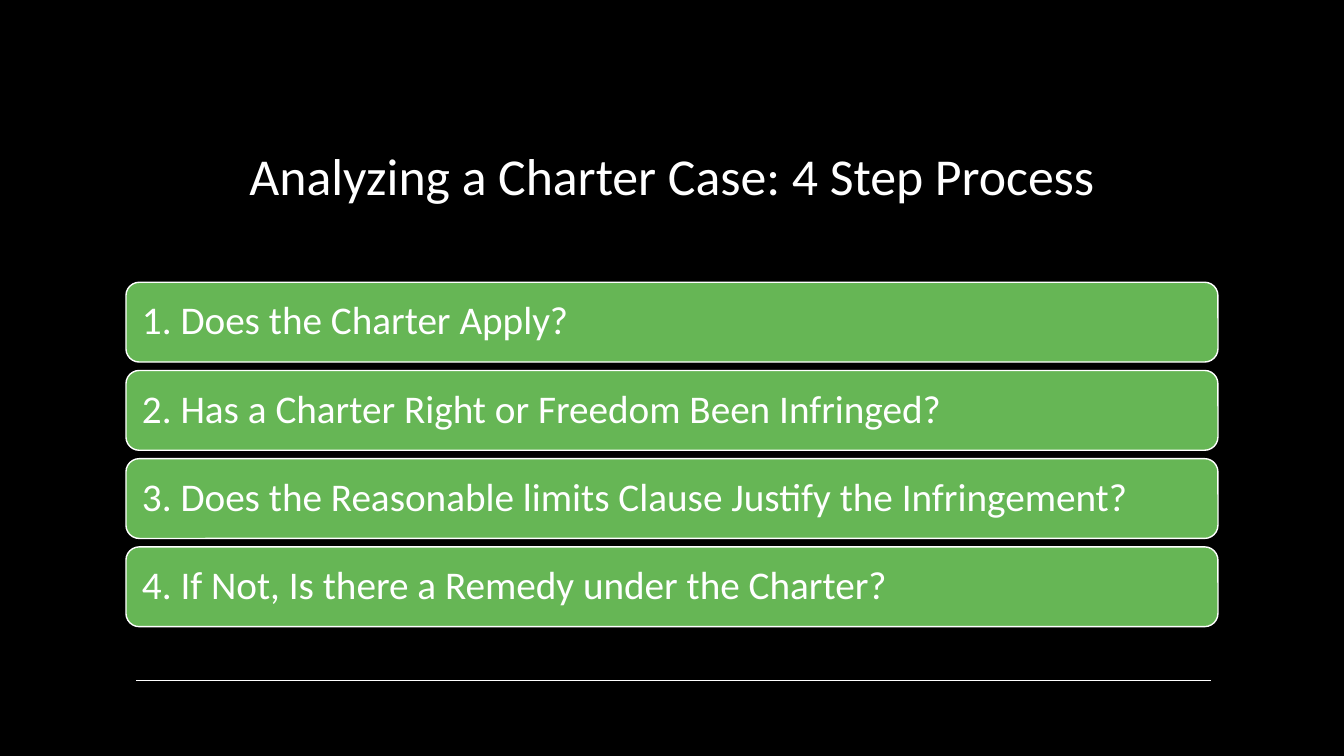
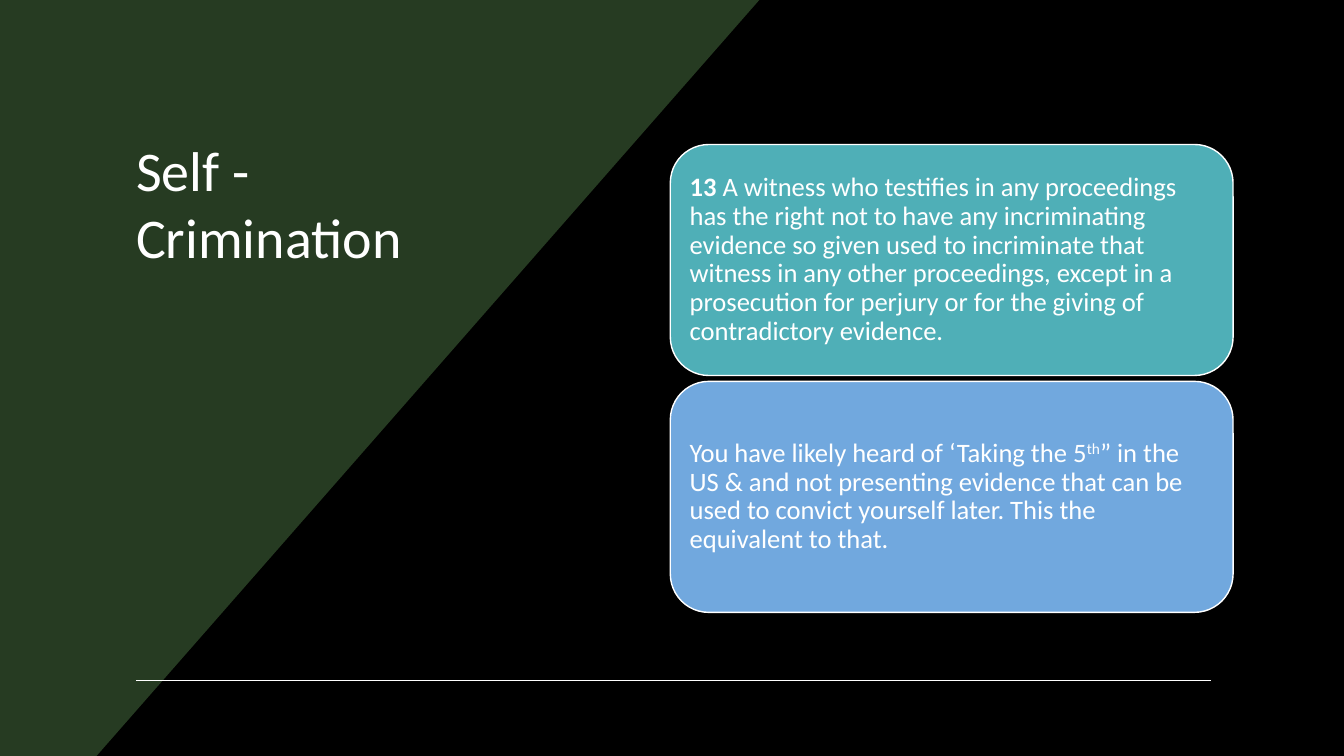
from lxml.etree import SubElement
from pptx import Presentation
from pptx.dml.color import RGBColor
from pptx.enum.shapes import MSO_CONNECTOR, MSO_SHAPE
from pptx.enum.text import MSO_ANCHOR, MSO_AUTO_SIZE, PP_ALIGN
from pptx.oxml.ns import qn
from pptx.util import Inches, Pt

COLUMNS, ROWS = 160, 90
TITLE_ONLY = 5
COLORS = {
    "background": "000000",
    "text": "FFFFFF",
    "wedge": "263B22",
    "green": "66B655",
    "teal": "4FAFB7",
    "blue": "71A8DE",
}


def color(name):
    return RGBColor.from_string(COLORS[name])


def apply(target, **values):
    for name, value in values.items():
        setattr(target, name, value)


class Deck:
    """Holds the shared style and the slide being built."""

    font = "Calibri"
    line_width = Pt(1)

    def __init__(self):
        self.presentation = Presentation()
        apply(self.presentation, slide_width=Inches(13.33), slide_height=Inches(7.5))
        background = self.presentation.slide_master.background.fill
        background.solid()
        background.fore_color.rgb = color("background")
        self.slide = None

    def x(self, columns):
        return round(self.presentation.slide_width * columns / COLUMNS)

    def y(self, rows):
        return round(self.presentation.slide_height * rows / ROWS)

    def box(self, left, top, width, height):
        return self.x(left), self.y(top), self.x(width), self.y(height)

    def style_run(self, run, size, bold=False):
        apply(run.font, name=self.font, size=Pt(size), bold=bold)
        run.font.color.rgb = color("text")

    def new_slide(self):
        layout = self.presentation.slide_layouts[TITLE_ONLY]
        self.slide = self.presentation.slides.add_slide(layout)
        self.footer_rule()

    def footer_rule(self):
        rule = self.slide.shapes.add_connector(
            MSO_CONNECTOR.STRAIGHT, self.x(16.2), self.y(81), self.x(144.2), self.y(81))
        rule.line.width = self.line_width
        rule.line.color.rgb = color("text")
        SubElement(rule._element.spPr, qn("a:effectLst"))

    def title(self, text, place, size, align, anchor):
        heading = self.slide.shapes.title
        left, top, width, height = self.box(*place)
        apply(heading, left=left, top=top, width=width, height=height)
        frame = heading.text_frame
        frame.text = text
        apply(frame, word_wrap=True, auto_size=MSO_AUTO_SIZE.NONE,
              vertical_anchor=anchor)
        paragraph = frame.paragraphs[0]
        paragraph.alignment = align
        self.style_run(paragraph.runs[0], size)

    def wedge(self, top_width, bottom_width):
        """Draws a full-height slanted panel at the left, behind everything."""
        outline = self.slide.shapes.build_freeform(0, 0)
        bottom = self.y(ROWS)
        outline.add_line_segments(
            [(self.x(top_width), 0), (self.x(bottom_width), bottom), (0, bottom)])
        panel = outline.convert_to_shape()
        panel.shadow.inherit = False
        panel.fill.solid()
        panel.fill.fore_color.rgb = color("wedge")
        panel.line.fill.background()
        self.slide.shapes._spTree.insert(2, panel._element)

    def card(self, pieces, place, fill, size, inset):
        """Adds a rounded card; pieces are (text, kind) pairs."""
        card = self.slide.shapes.add_shape(
            MSO_SHAPE.ROUNDED_RECTANGLE, *self.box(*place))
        card.shadow.inherit = False
        card.fill.solid()
        card.fill.fore_color.rgb = color(fill)
        card.line.width = self.line_width
        card.line.color.rgb = color("text")
        margin = Inches(inset)
        frame = card.text_frame
        apply(frame, word_wrap=True, vertical_anchor=MSO_ANCHOR.MIDDLE,
              margin_left=margin, margin_right=margin,
              margin_top=margin, margin_bottom=margin)
        paragraph = frame.paragraphs[0]
        apply(paragraph, alignment=PP_ALIGN.LEFT, line_spacing=0.9)
        for text, kind in pieces:
            run = paragraph.add_run()
            run.text = text
            self.style_run(run, size, bold=kind == "bold")
            if kind == "superscript":
                run._r.get_or_add_rPr().set("baseline", "30000")

    def card_stack(self, cards, place, pitch, size, inset):
        """Stacks (pieces, fill) cards downwards from the first card's place."""
        left, top, width, height = place
        for index, (pieces, fill) in enumerate(cards):
            self.card(pieces, (left, top + index * pitch, width, height),
                      fill, size, inset)


def process_slide(deck):
    deck.new_slide()
    deck.title("Analyzing a Charter Case: 4 Step Process", (23, 11.9, 114, 13.2),
               37, PP_ALIGN.CENTER, MSO_ANCHOR.BOTTOM)
    steps = [
        "1. Does the Charter Apply?",
        "2. Has a Charter Right or Freedom Been Infringed?",
        "3. Does the Reasonable limits Clause Justify the Infringement?",
        "4. If Not, Is there a Remedy under the Charter?",
    ]
    deck.card_stack([([(step, "plain")], "green") for step in steps],
                    (15, 33.6, 130, 9.5), pitch=10.5, size=28, inset=0.12)


def self_crimination_slide(deck):
    deck.new_slide()
    deck.wedge(top_width=90.4, bottom_width=11.5)
    deck.title("Self - Crimination", (15, 15.5, 46.3, 20.5),
               40, PP_ALIGN.LEFT, MSO_ANCHOR.TOP)
    section = [
        ("13", "bold"),
        (" A witness who testifies in any proceedings has the right not to have "
         "any incriminating evidence so given used to incriminate that witness in "
         "any other proceedings, except in a prosecution for perjury or for the "
         "giving of contradictory evidence.", "plain"),
    ]
    comparison = [
        ("You have likely heard of ‘Taking the 5", "plain"),
        ("th", "superscript"),
        ("” in the US & and not presenting evidence that can be used to convict "
         "yourself later. This the equivalent to that.", "plain"),
    ]
    deck.card_stack([(section, "teal"), (comparison, "blue")],
                    (79.8, 17.2, 67, 27.5), pitch=28.2, size=19, inset=0.08)


def main():
    deck = Deck()
    process_slide(deck)
    self_crimination_slide(deck)
    deck.presentation.save("out.pptx")


if __name__ == "__main__":
    main()
